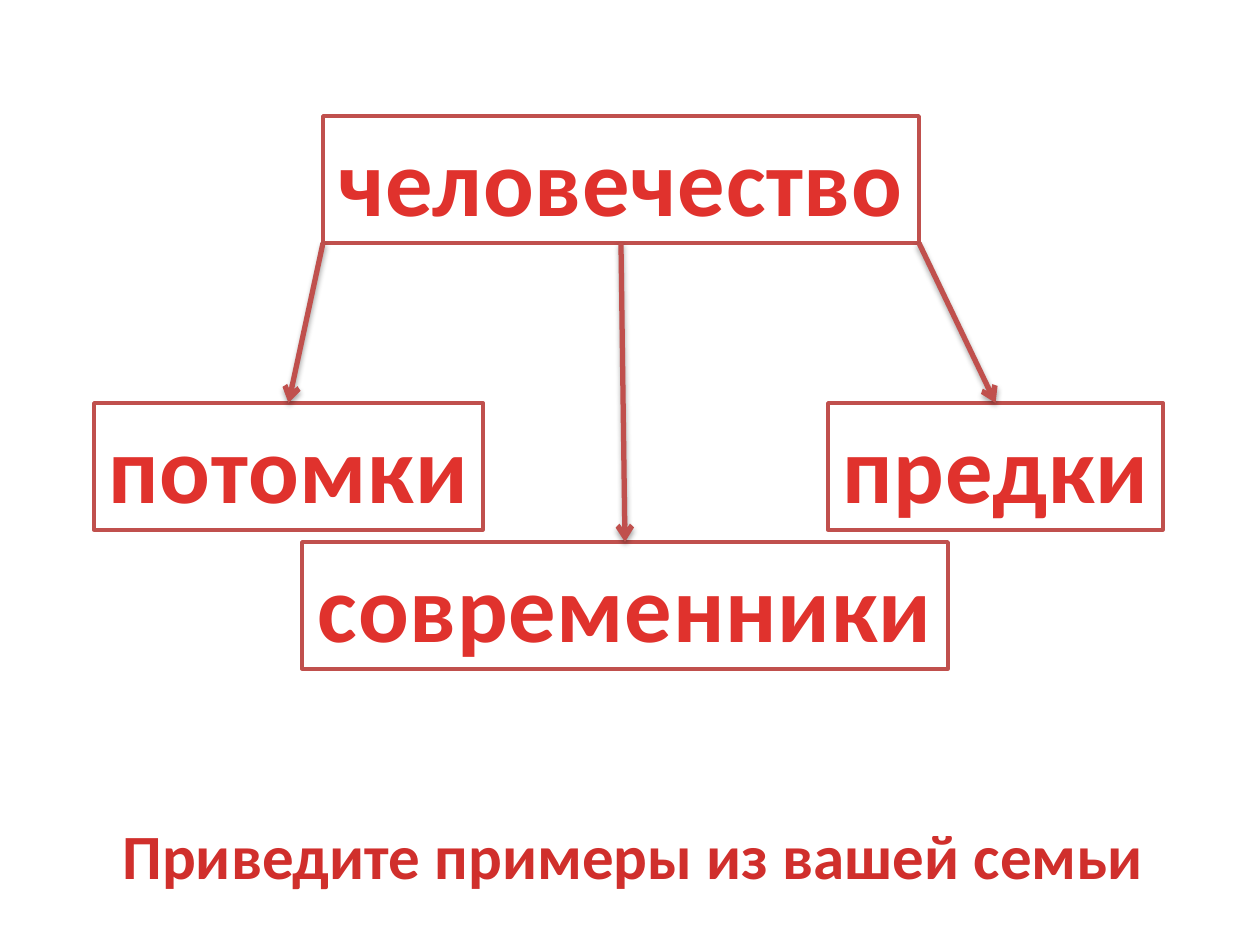
from lxml import etree
from pptx import Presentation
from pptx.dml.color import RGBColor
from pptx.enum.shapes import MSO_CONNECTOR, MSO_SHAPE
from pptx.enum.text import MSO_ANCHOR, MSO_AUTO_SIZE, PP_ALIGN
from pptx.oxml import parse_xml
from pptx.oxml.ns import qn
from pptx.util import Pt

RECT, LINE = MSO_SHAPE.RECTANGLE, MSO_CONNECTOR.STRAIGHT
CENTER, TOP, GROW = PP_ALIGN.CENTER, MSO_ANCHOR.TOP, MSO_AUTO_SIZE.SHAPE_TO_FIT_TEXT
SCALE = 914400 / 126
WIDTH, HEIGHT, BOX_H = 1260, 945, 127
COLORS = {"paper": "FFFFFF", "edge": "C0504D", "word": "E0322D", "task": "D02F2C"}

# text, left, top, width
ROOT = ("человечество", 323, 116, 596)
KINDS = [
    ("современники", 302, 542, 646),
    ("предки", 828, 403, 335),
    ("потомки", 94, 403, 389),
]
TASK = ("Приведите примеры из вашей семьи", 105, 810, 1056, 89)
# share of the root's width where the arrow to each kind starts
STARTS = [0.5, 1, 0]

SHADOW = (
    '<a:effectLst xmlns:a="http://schemas.openxmlformats.org/drawingml/2006/main">'
    '<a:outerShdw blurRad="40000" dist="23000" dir="5400000" rotWithShape="0">'
    '<a:srgbClr val="000000"><a:alpha val="35000"/></a:srgbClr>'
    "</a:outerShdw></a:effectLst>"
)


def px(*vals):
    return [round(v * SCALE) for v in vals]


def color(name):
    return RGBColor.from_string(COLORS[name])


def write(shape, text, size, hue, gap=0):
    frame = shape.text_frame
    form = {"word_wrap": False, "auto_size": GROW, "vertical_anchor": TOP}
    for key, val in form.items():
        setattr(frame, key, val)
    para = frame.paragraphs[0]
    para.alignment = CENTER
    run = para.add_run()
    run.text = text
    for key, val in {"name": "Calibri", "size": Pt(size), "bold": True}.items():
        setattr(run.font, key, val)
    run.font.color.rgb = color(hue)
    if gap:
        run.font._element.set("spc", str(gap))


def add_box(slide, text, left, top, width):
    box = slide.shapes.add_shape(RECT, *px(left, top, width, BOX_H))
    box.shadow.inherit = False
    box.fill.solid()
    box.fill.fore_color.rgb = color("paper")
    box.line.color.rgb = color("edge")
    box.line.width = Pt(2)
    write(box, text, 54, "word", 50)


def add_arrow(slide, *ends):
    arrow = slide.shapes.add_connector(LINE, *px(*ends))
    arrow.line.color.rgb = color("edge")
    arrow.line.width = Pt(3)
    etree.SubElement(arrow.line._get_or_add_ln(), qn("a:tailEnd"), type="arrow")
    arrow._element.spPr.append(parse_xml(SHADOW))


def main():
    deck = Presentation()
    deck.slide_width, deck.slide_height = px(WIDTH, HEIGHT)
    slide = deck.slides.add_slide(deck.slide_layouts[6])
    for item in [ROOT, *KINDS]:
        add_box(slide, *item)
    _, left, top, width = ROOT
    for share, (_, x, y, w) in zip(STARTS, KINDS):
        add_arrow(slide, left + share * width, top + BOX_H, x + w / 2, y)
    text, *place = TASK
    write(slide.shapes.add_textbox(*px(*place)), text, 36, "task")
    deck.save("out.pptx")


if __name__ == "__main__":
    main()
